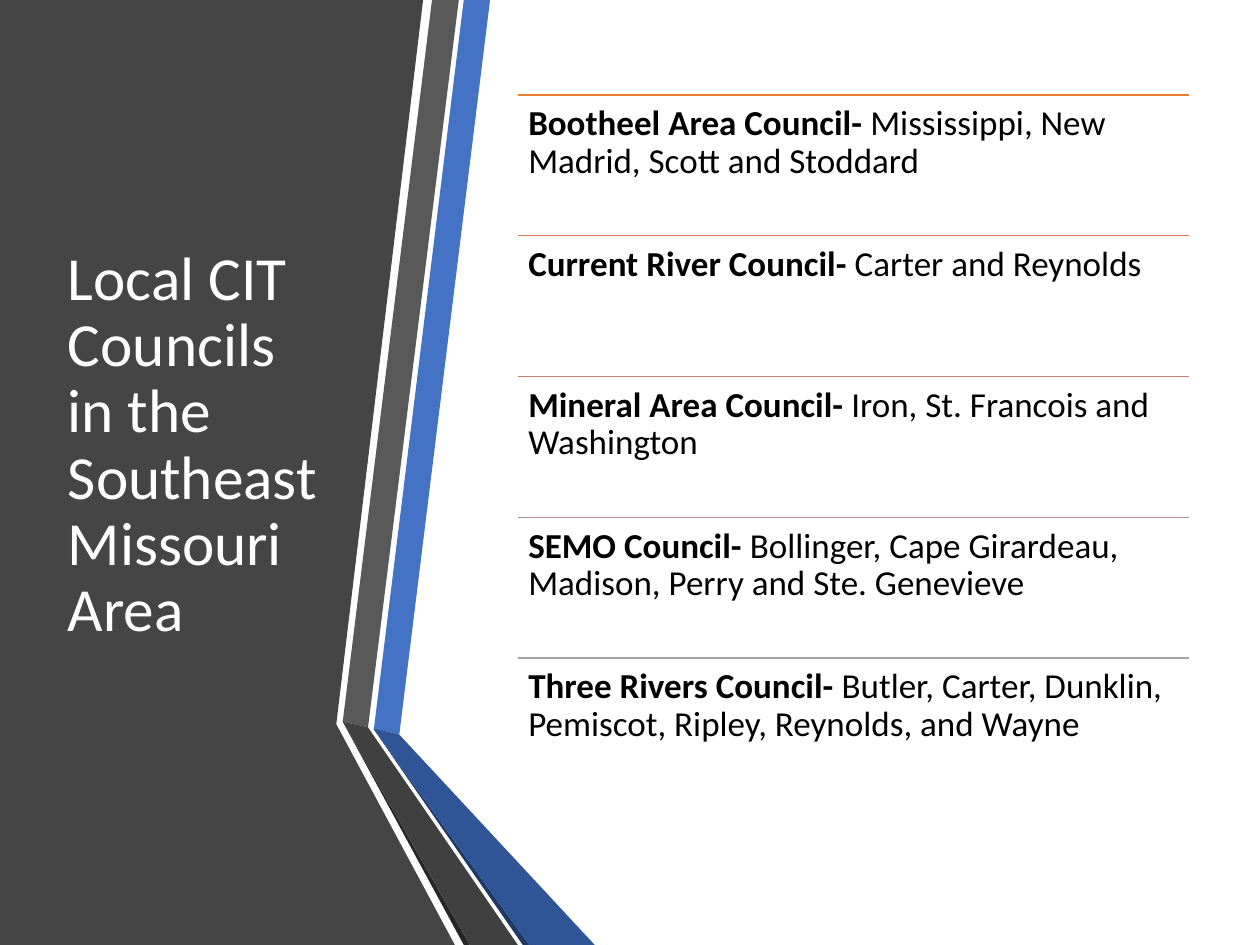
from lxml import etree
from pptx import Presentation
from pptx import util as u
from pptx.dml.color import RGBColor
from pptx.enum import shapes, text
from pptx.oxml.ns import qn

COLOURS = {
    "panel": "454545",
    "blue": "4472C4",
    "blue_fold": "2F5597",
    "blue_edge": "203864",
    "grey": "595959",
    "grey_fold": "404040",
    "grey_edge": "262626",
    "title": "FFFFFF",
    "body": "000000",
}
WIDTH, HEIGHT = 25.4, 19.05

# Corners of each band in centimetres, from back to front
BANDS = [
    ("panel", [(6.71, 0), (8.53, 0), (6.78, 14.6), (9.17, HEIGHT), (0, HEIGHT), (0, 0)]),
    ("blue", [(7.54, 14.68), (8.05, 14.81), (9.88, 0), (9.35, 0)]),
    ("grey", [(9.25, 0), (8.71, 0), (6.91, 14.55), (7.42, 14.66)]),
    ("grey_edge", [(6.91, 14.55), (9.35, HEIGHT), (9.47, HEIGHT)]),
    ("blue_edge", [(7.54, 14.71), (10.54, HEIGHT), (10.67, HEIGHT)]),
    ("blue_fold", [(7.54, 14.71), (10.67, HEIGHT), (11.99, HEIGHT), (8.05, 14.81), (7.54, 14.68)]),
    ("grey_fold", [(10.44, HEIGHT), (7.52, 14.81), (7.42, 14.66), (6.91, 14.55), (9.47, HEIGHT)]),
]

# Council, its counties, colour of the rule above
COUNCILS = [
    ("Bootheel Area Council- ", "Mississippi, New Madrid, Scott and Stoddard", "ED7D31"),
    ("Current River Council- ", "Carter and Reynolds", "D87A51"),
    ("Mineral Area Council- ", "Iron, St. Francois and Washington", "C48170"),
    ("SEMO Council- ", "Bollinger, Cape Girardeau, Madison, Perry and Ste. Genevieve", "B4908B"),
    ("Three Rivers Council- ", "Butler, Carter, Dunklin, Pemiscot, Ripley, Reynolds, and Wayne", "A5A5A5"),
]
LIST_LEFT, LIST_TOP, LIST_WIDTH, ROW_HEIGHT = 10.44, 1.91, 13.52, 2.84


class SlideBuilder:
    """Draws on one slide; all lengths are in centimetres."""

    font_name = "Calibri"
    line_spacing = 0.9

    def __init__(self, slide):
        self.slide = slide

    def band(self, corners, colour):
        points = [(u.Cm(x), u.Cm(y)) for x, y in corners]
        builder = self.slide.shapes.build_freeform(*points[0])
        builder.add_line_segments(points[1:], close=True)
        band = builder.convert_to_shape()
        band.shadow.inherit = False
        band.fill.solid()
        band.fill.fore_color.rgb = RGBColor.from_string(colour)
        band.line.fill.background()

    def rule(self, left, top, width, colour):
        rule = self.slide.shapes.add_connector(
            shapes.MSO_CONNECTOR.STRAIGHT,
            u.Cm(left), u.Cm(top), u.Cm(left + width), u.Cm(top))
        rule.line.width = u.Pt(1)
        rule.line.color.rgb = RGBColor.from_string(colour)
        etree.SubElement(rule._element.spPr, qn("a:effectLst"))

    def text(self, box, runs, size, colour, anchor, inset=None):
        """Add one paragraph of (wording, bold) runs; inset None keeps the default margins."""
        frame = self.slide.shapes.add_textbox(*map(u.Cm, box)).text_frame
        frame.word_wrap = True
        frame.vertical_anchor = anchor
        if inset is not None:
            frame.margin_left = frame.margin_right = u.Cm(inset)
            frame.margin_top = frame.margin_bottom = u.Cm(inset)
        paragraph = frame.paragraphs[0]
        paragraph.line_spacing = self.line_spacing
        paragraph.font.name = self.font_name
        paragraph.font.size = u.Pt(size)
        paragraph.font.color.rgb = RGBColor.from_string(colour)
        for wording, bold in runs:
            run = paragraph.add_run()
            run.text = wording
            run.font.bold = bold


def main():
    deck = Presentation()
    deck.slide_width, deck.slide_height = u.Cm(WIDTH), u.Cm(HEIGHT)
    builder = SlideBuilder(deck.slides.add_slide(deck.slide_layouts[6]))

    for part, corners in BANDS:
        builder.band(corners, COLOURS[part])

    builder.text((1.12, 1.91, 5.79, 14.17),
                 [("Local CIT Councils in the Southeast Missouri Area", False)],
                 35, COLOURS["title"], text.MSO_ANCHOR.MIDDLE)

    for row, (council, counties, rule_colour) in enumerate(COUNCILS):
        top = LIST_TOP + row * ROW_HEIGHT
        builder.rule(LIST_LEFT, top, LIST_WIDTH, rule_colour)
        builder.text((LIST_LEFT, top, LIST_WIDTH, ROW_HEIGHT),
                     [(council, True), (counties, False)],
                     20, COLOURS["body"], text.MSO_ANCHOR.TOP, inset=0.21)

    deck.save("out.pptx")


if __name__ == "__main__":
    main()
